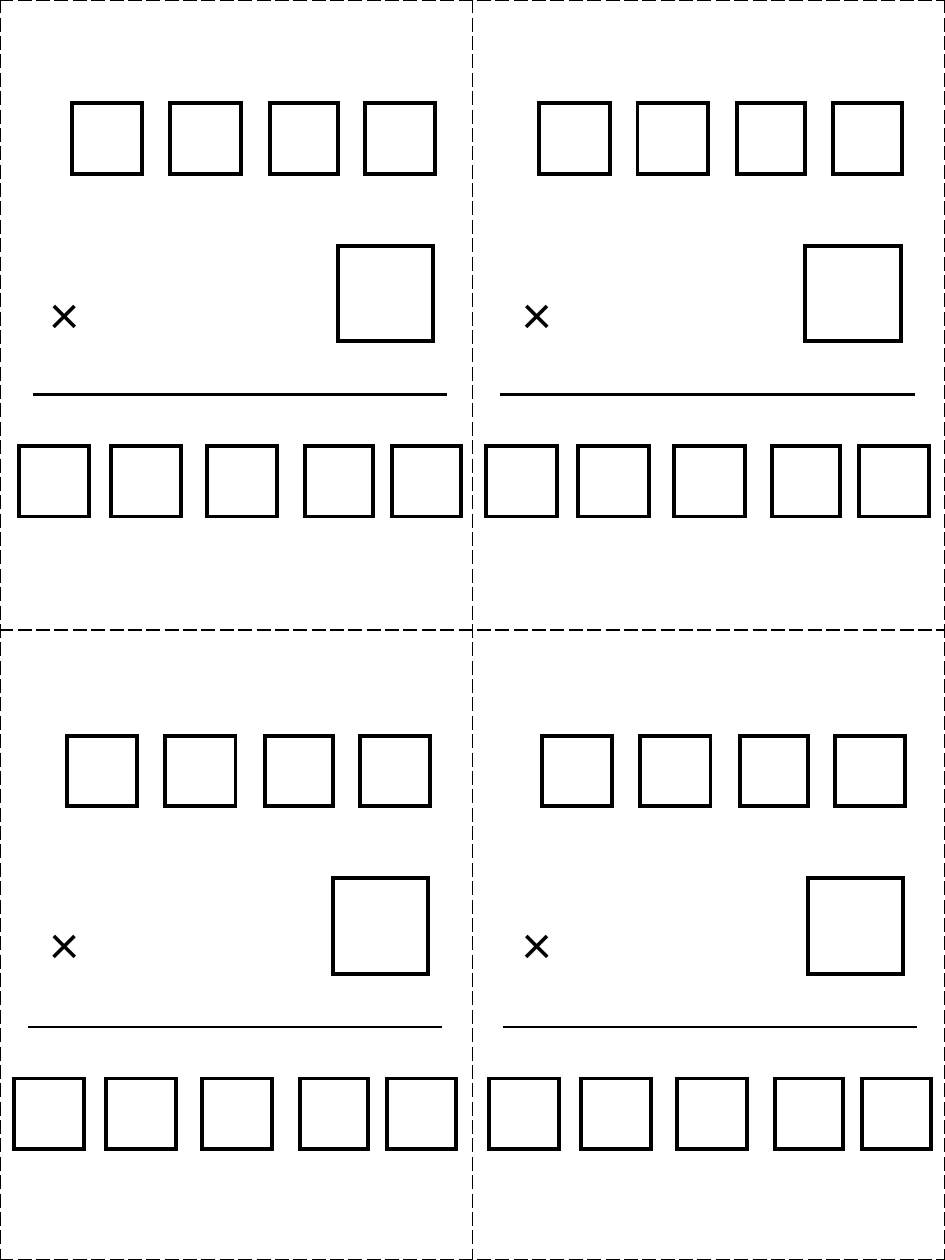
from lxml import etree
from pptx import Presentation
from pptx import util as u
from pptx.dml.color import RGBColor
from pptx.enum import shapes, text
from pptx.oxml.ns import qn

PX = u.Inches(1) // 100
BLACK = RGBColor(0, 0, 0)
WHITE = RGBColor(255, 255, 255)

SIZE = (750, 1000)
CARDS = [(15, 82), (386, 82), (11, 584), (388, 584)]
# Digit boxes: left and width within a card
TOP = [(42, 56), (120, 56), (199, 54), (275, 55)]
FOOT = [(0, 56), (73, 56), (149, 56), (227, 54), (296, 55)]


def px(*vals):
    return [v * PX for v in vals]


def style(obj, vals):
    for key, val in vals.items():
        setattr(obj, key, val)


def sub(node, tag, **attrs):
    return etree.SubElement(node, qn(tag), attrs)


def edge(cell):
    """Give a cell dashed borders on all four sides."""
    props = cell._tc.get_or_add_tcPr()
    for side in "LRTB":
        line = sub(props, f"a:ln{side}", w=str(u.Pt(1)))
        sub(sub(line, "a:solidFill"), "a:srgbClr", val=str(BLACK))
        sub(line, "a:prstDash", val="lgDash")


def grid(slide, x, y, w, h):
    """Split the page into four cells, each with a times sign."""
    table = slide.shapes.add_table(2, 2, *px(x, y, w, h)).table
    style(table, {"first_row": False, "horz_banding": False})
    for cell in table.iter_cells():
        edge(cell)
        cell.fill.background()
        style(cell, {"vertical_anchor": text.MSO_ANCHOR.MIDDLE,
                     "margin_left": 40 * PX})
        run = cell.text_frame.paragraphs[0].add_run()
        run.text = "×"
        style(run.font, {"name": "Calibri", "size": u.Pt(32)})
        run.font.color.rgb = BLACK


def box(group, x, y, w, h):
    rect = group.shapes.add_shape(shapes.MSO_SHAPE.RECTANGLE, *px(x, y, w, h))
    rect.shadow.inherit = False
    rect.fill.solid()
    rect.fill.fore_color.rgb = WHITE
    rect.line.color.rgb = BLACK
    rect.line.width = u.Pt(2.25)
    sub(rect._element.spPr.find(qn("a:ln")), "a:miter", lim="800000")


def rule(group, x, y, w):
    line = group.shapes.add_connector(
        shapes.MSO_CONNECTOR.STRAIGHT, *px(x, y, x + w, y))
    line.line.color.rgb = BLACK
    line.line.width = u.Pt(1.5)
    sub(line._element.spPr, "a:effectLst")


def card(slide, x, y):
    """Draw one blank four-digit by one-digit multiplication."""
    group = slide.shapes.add_group_shape()
    for left, wide in TOP:
        box(group, x + left, y, wide, 56)
    box(group, x + 253, y + 113, 76, 76)
    rule(group, x + 11, y + 231, 329)
    for left, wide in FOOT:
        box(group, x + left, y + 272, wide, 56)


def main():
    deck = Presentation()
    deck.slide_width, deck.slide_height = px(*SIZE)
    slide = deck.slides.add_slide(deck.slide_layouts[6])
    grid(slide, 0, 0, *SIZE)
    for x, y in CARDS:
        card(slide, x, y)
    deck.save("out.pptx")


if __name__ == "__main__":
    main()
